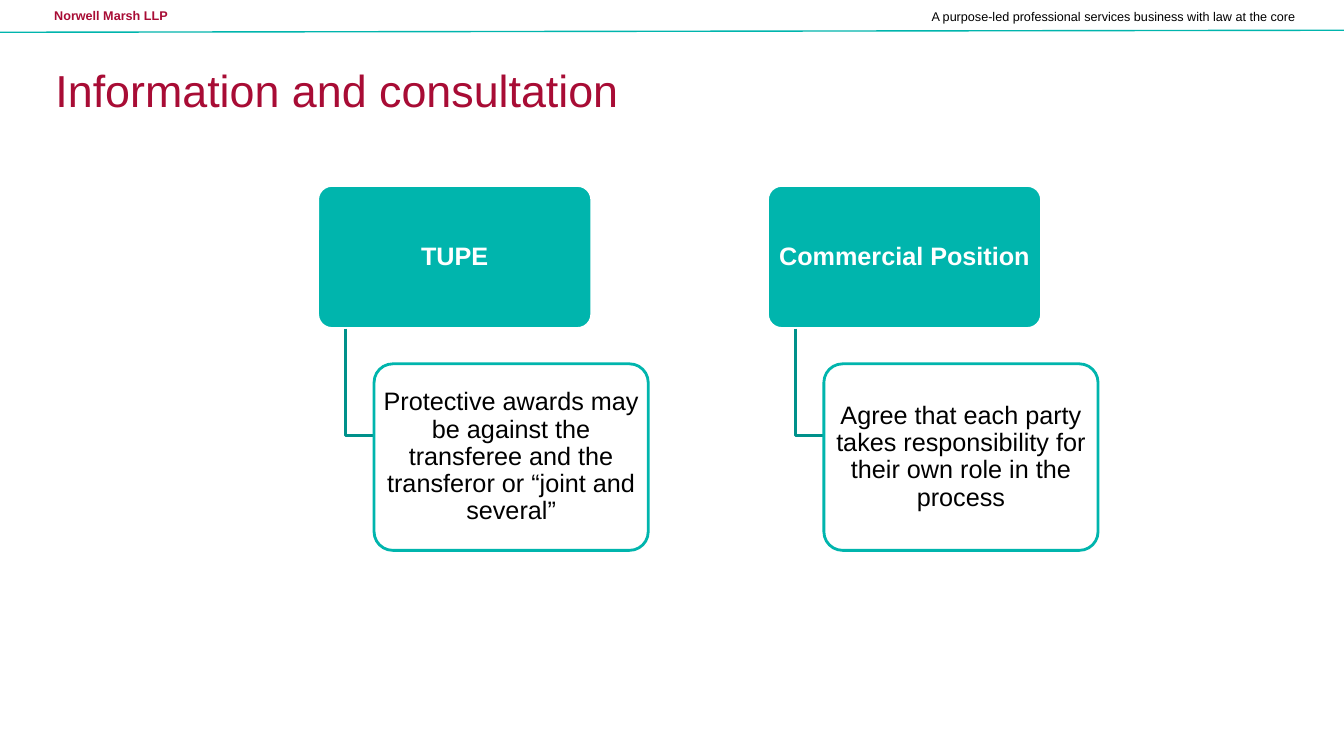
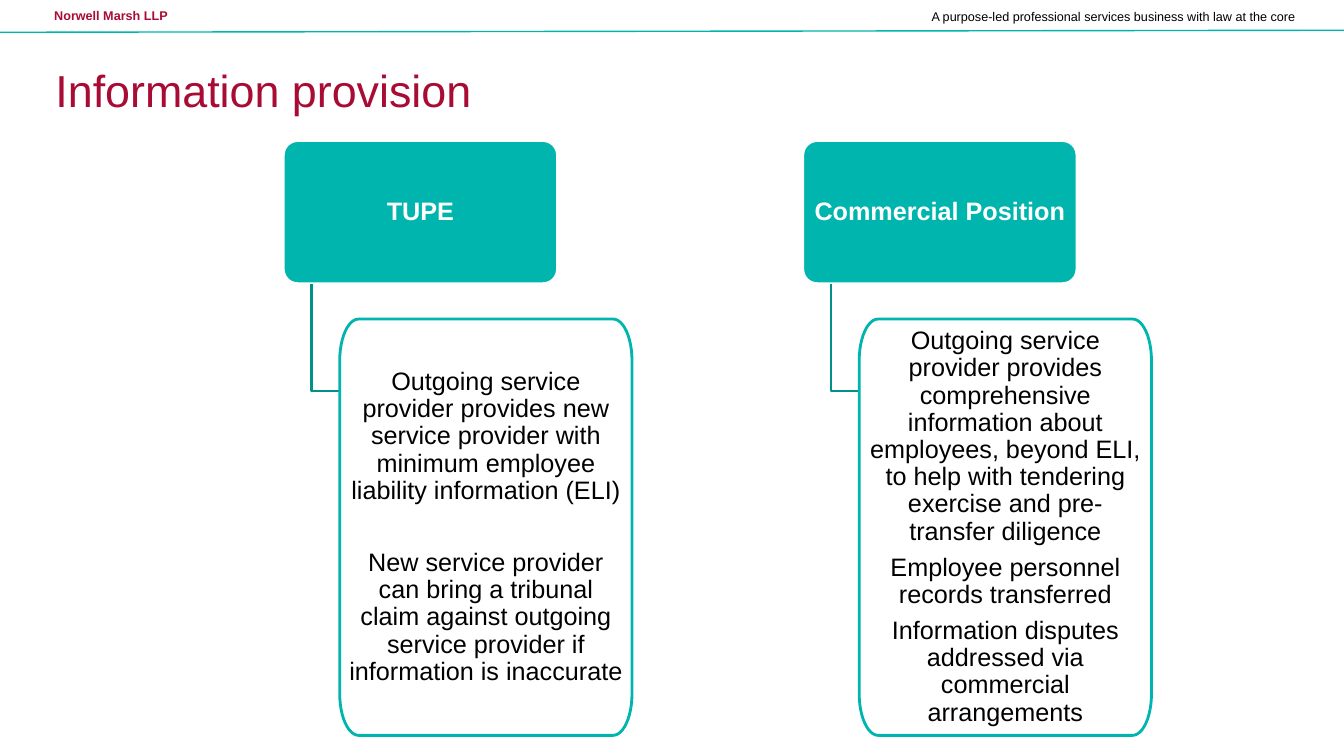
from dataclasses import dataclass
from math import cos, pi, sin

from lxml import etree
from pptx import Presentation
from pptx.dml.color import RGBColor
from pptx.enum.shapes import MSO_CONNECTOR as Connector
from pptx.enum.shapes import MSO_SHAPE as Preset
from pptx.enum.text import MSO_ANCHOR as Anchor
from pptx.enum.text import MSO_AUTO_SIZE as AutoSize
from pptx.enum.text import PP_ALIGN as Align
from pptx.oxml.ns import qn
from pptx.shapes.autoshape import Shape
from pptx.slide import Slide
from pptx.text.text import TextFrame
from pptx.util import Inches, Pt

FONT = "Arial"
CRIMSON = RGBColor(0xA8, 0x0C, 0x35)
TEAL = RGBColor(0x00, 0xB5, 0xAD)
DARK_TEAL = RGBColor(0x00, 0x91, 0x8B)
WHITE = RGBColor(0xFF, 0xFF, 0xFF)
BLACK = RGBColor(0x00, 0x00, 0x00)

SLIDE_WIDTH, SLIDE_HEIGHT = Inches(13.33), Inches(7.5)
TITLE_ONLY = 5

# Percentages of the slide's width or height
HEADING_WIDTH, HEADING_HEIGHT = 20.4, 18.93
DETAIL_INDENT, DETAIL_GAP = 4.2, 4.67
BRANCH_INDENT, BRANCH_DROP = 2.1, 14.2

CORNER = 0.1  # share of a box's height
STRETCHED_CORNER = 0.065  # share of a stretched box's width
ARC_STEPS = 12
BOX_MARGIN_X, BOX_MARGIN_Y = Inches(0.08), Inches(0.07)


@dataclass(frozen=True)
class Box:
    """Place and size in percent of the slide."""
    left: float
    top: float
    width: float
    height: float

    def emu(self) -> tuple[int, int, int, int]:
        return across(self.left), down(self.top), across(self.width), down(self.height)


@dataclass(frozen=True)
class TextStyle:
    size: float
    color: RGBColor
    bold: bool = False
    align: Align = Align.LEFT
    line_spacing: float = 1.0
    gap: float = 0


@dataclass(frozen=True)
class Branch:
    heading: str
    details: tuple[str, ...]
    gap: float = 6.3


@dataclass(frozen=True)
class Comparison:
    title: str
    left: float
    top: float
    pitch: float
    detail_width: float
    detail_height: float
    stretched: bool
    branches: tuple[Branch, ...]


TITLE_STYLE = TextStyle(32, CRIMSON)
FIRM_STYLE = TextStyle(9, CRIMSON, bold=True)
TAGLINE_STYLE = TextStyle(9, BLACK, align=Align.RIGHT)
HEADING_STYLE = TextStyle(18, WHITE, True, Align.CENTER, 0.9)

COMPARISONS = (
    Comparison(
        "Information and consultation", 23.63, 24.53, 33.47, 20.4, 24.67, False,
        (
            Branch("TUPE", (
                "Protective awards may be against the transferee and the "
                "transferor or “joint and several”",
            )),
            Branch("Commercial Position", (
                "Agree that each party takes responsibility for their own "
                "role in the process",
            )),
        ),
    ),
    Comparison(
        "Information provision", 21.08, 18.6, 38.65, 21.75, 55.07, True,
        (
            Branch("TUPE", (
                "Outgoing service provider provides new service provider with "
                "minimum employee liability information (ELI)",
                "New service provider can bring a tribunal claim against "
                "outgoing service provider if information is inaccurate",
            ), gap=32),
            Branch("Commercial Position", (
                "Outgoing service provider provides comprehensive information "
                "about employees, beyond ELI, to help with tendering exercise "
                "and pre-transfer diligence",
                "Employee personnel records transferred",
                "Information disputes addressed via commercial arrangements",
            )),
        ),
    ),
)


def across(percent: float) -> int:
    return round(SLIDE_WIDTH * percent / 100)


def down(percent: float) -> int:
    return round(SLIDE_HEIGHT * percent / 100)


def write(frame: TextFrame, texts: tuple[str, ...], style: TextStyle) -> None:
    frame.word_wrap = True
    frame.auto_size = AutoSize.NONE
    frame.vertical_anchor = Anchor.MIDDLE
    for index, text in enumerate(texts):
        paragraph = frame.add_paragraph() if index else frame.paragraphs[0]
        paragraph.alignment = style.align
        paragraph.line_spacing = style.line_spacing
        paragraph.space_before = Pt(style.gap if index else 0)
        run = paragraph.add_run()
        run.text = text
        run.font.name = FONT
        run.font.size = Pt(style.size)
        run.font.bold = style.bold
        run.font.color.rgb = style.color


def add_label(slide: Slide, box: Box, text: str, style: TextStyle) -> None:
    write(slide.shapes.add_textbox(*box.emu()).text_frame, (text,), style)


def add_header(slide: Slide) -> None:
    add_label(slide, Box(3.3, 0.4, 39.6, 3.33), "Norwell Marsh LLP", FIRM_STYLE)
    add_label(slide, Box(40, 0.27, 57.1, 3.87),
              "A purpose-led professional services business with law at the core",
              TAGLINE_STYLE)
    rule = slide.shapes.add_connector(
        Connector.STRAIGHT, 0, down(4.27), SLIDE_WIDTH, down(4))
    rule.line.color.rgb = TEAL
    rule.line.width = Pt(1)
    properties = rule.element.find(qn("p:spPr"))
    etree.SubElement(properties, qn("a:effectLst"))


def add_title(slide: Slide, text: str) -> None:
    title = slide.shapes.title
    title.left, title.top, title.width, title.height = Box(3.38, 5.2, 93.3, 13.33).emu()
    write(title.text_frame, (text,), TITLE_STYLE)


def add_rounded(slide: Slide, box: Box) -> Shape:
    shape = slide.shapes.add_shape(Preset.ROUNDED_RECTANGLE, *box.emu())
    shape.adjustments[0] = CORNER
    return shape


def add_stretched(slide: Slide, box: Box) -> Shape:
    """Draw a box whose corners are quarter ellipses."""
    left, top, width, height = box.emu()
    radius_x, radius_y = width * STRETCHED_CORNER, height * CORNER
    right, bottom = left + width - radius_x, top + height - radius_y
    centers = (
        (right, bottom),
        (left + radius_x, bottom),
        (left + radius_x, top + radius_y),
        (right, top + radius_y),
    )
    points = []
    for quarter, (center_x, center_y) in enumerate(centers):
        for step in range(ARC_STEPS + 1):
            angle = (quarter + step / ARC_STEPS) * pi / 2
            points.append((round(center_x + radius_x * cos(angle)),
                           round(center_y + radius_y * sin(angle))))
    builder = slide.shapes.build_freeform(*points[0])
    builder.add_line_segments(points[1:], close=True)
    return builder.convert_to_shape()


def fill_box(shape: Shape, fill: RGBColor, line: RGBColor,
             texts: tuple[str, ...], style: TextStyle, inset: int) -> None:
    """Format a box; inset is the room its rounded corners already take from the text."""
    shape.shadow.inherit = False
    shape.fill.solid()
    shape.fill.fore_color.rgb = fill
    shape.line.color.rgb = line
    shape.line.width = Pt(2)
    frame = shape.text_frame
    frame.margin_left = frame.margin_right = BOX_MARGIN_X - inset
    frame.margin_top = frame.margin_bottom = BOX_MARGIN_Y - inset
    write(frame, texts, style)


def add_elbow(slide: Slide, left: float, top: float) -> None:
    """Draw the angled line from a heading's bottom to its detail box."""
    x, y = across(left), down(top)
    corner_y = down(top + BRANCH_DROP)
    builder = slide.shapes.build_freeform(x, y)
    builder.add_line_segments(
        [(x, corner_y), (across(left + DETAIL_INDENT - BRANCH_INDENT), corner_y)],
        close=False)
    elbow = builder.convert_to_shape()
    elbow.shadow.inherit = False
    elbow.fill.background()
    elbow.line.color.rgb = DARK_TEAL
    elbow.line.width = Pt(2)


def add_branch(slide: Slide, comparison: Comparison, column: int) -> None:
    branch = comparison.branches[column]
    left = comparison.left + column * comparison.pitch
    bottom = comparison.top + HEADING_HEIGHT

    heading = add_rounded(slide, Box(left, comparison.top, HEADING_WIDTH, HEADING_HEIGHT))
    fill_box(heading, TEAL, WHITE, (branch.heading,), HEADING_STYLE, Inches(0.04))
    add_elbow(slide, left + BRANCH_INDENT, bottom)

    box = Box(left + DETAIL_INDENT, bottom + DETAIL_GAP,
              comparison.detail_width, comparison.detail_height)
    style = TextStyle(18, BLACK, False, Align.CENTER, 0.9, branch.gap)
    if comparison.stretched:
        detail, inset = add_stretched(slide, box), 0
    else:
        detail, inset = add_rounded(slide, box), Inches(0.05)
    fill_box(detail, WHITE, TEAL, branch.details, style, inset)


def main() -> None:
    presentation = Presentation()
    presentation.slide_width, presentation.slide_height = SLIDE_WIDTH, SLIDE_HEIGHT
    for comparison in COMPARISONS:
        slide = presentation.slides.add_slide(presentation.slide_layouts[TITLE_ONLY])
        add_header(slide)
        add_title(slide, comparison.title)
        for column in range(len(comparison.branches)):
            add_branch(slide, comparison, column)
    presentation.save("out.pptx")


if __name__ == "__main__":
    main()
